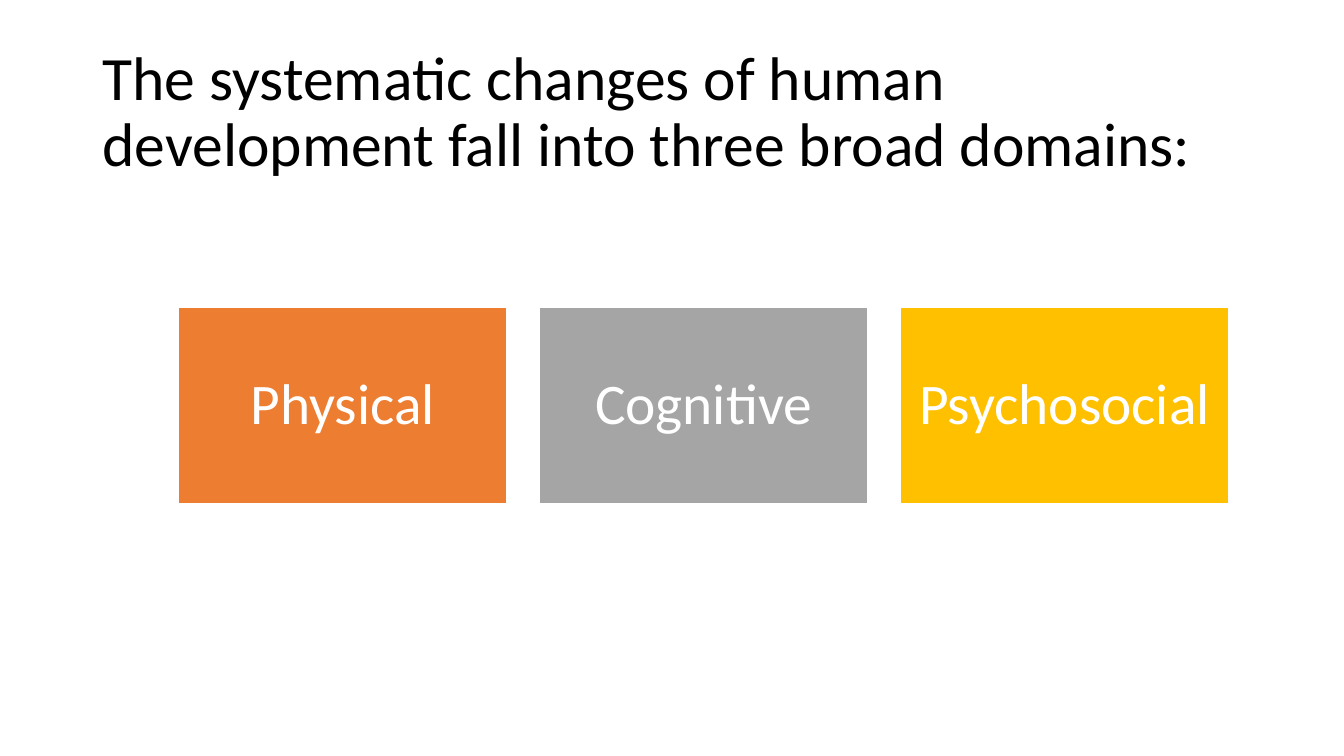
from dataclasses import dataclass

from pptx import Presentation
from pptx.dml.color import RGBColor
from pptx.enum.shapes import MSO_SHAPE
from pptx.enum.text import MSO_ANCHOR, PP_ALIGN
from pptx.slide import Slide
from pptx.text.text import TextFrame
from pptx.util import Inches, Pt

RECT = MSO_SHAPE.RECTANGLE
MIDDLE = MSO_ANCHOR.MIDDLE
LEFT, CENTER = PP_ALIGN.LEFT, PP_ALIGN.CENTER

BLACK = RGBColor(0x00, 0x00, 0x00)
WHITE = RGBColor(0xFF, 0xFF, 0xFF)
ORANGE = RGBColor(0xED, 0x7D, 0x31)
GRAY = RGBColor(0xA5, 0xA5, 0xA5)
GOLD = RGBColor(0xFF, 0xC0, 0x00)

FONT = "Calibri"
START, TOP, WIDTH, HEIGHT, STEP = 1.77, 3.05, 3.26, 1.95, 3.58
INSET = Inches(0.17)


@dataclass
class Domain:
    name: str
    color: RGBColor


TITLE = "The systematic changes of human development fall into three broad domains:"
DOMAINS = [
    Domain("Physical", ORANGE),
    Domain("Cognitive", GRAY),
    Domain("Psychosocial", GOLD),
]


def write(frame: TextFrame, text: str, size: int, color: RGBColor, align: PP_ALIGN) -> None:
    """Fill a frame with one vertically centred paragraph."""
    frame.word_wrap = True
    frame.vertical_anchor = MIDDLE
    para = frame.paragraphs[0]
    para.text = text
    para.alignment = align
    para.line_spacing = 0.9
    para.font.name = FONT
    para.font.size = Pt(size)
    para.font.color.rgb = color


def add_title(slide: Slide) -> None:
    """Add the slide title."""
    box = slide.shapes.add_textbox(Inches(0.92), Inches(0.4), Inches(11.5), Inches(1.45))
    write(box.text_frame, TITLE, 44, BLACK, LEFT)


def add_domain(slide: Slide, domain: Domain, left: float) -> None:
    """Add one coloured domain block."""
    block = slide.shapes.add_shape(
        RECT, Inches(left), Inches(TOP), Inches(WIDTH), Inches(HEIGHT)
    )
    block.shadow.inherit = False
    block.fill.solid()
    block.fill.fore_color.rgb = domain.color
    block.line.color.rgb = WHITE
    block.line.width = Pt(1)
    frame = block.text_frame
    frame.margin_left = frame.margin_right = INSET
    frame.margin_top = frame.margin_bottom = INSET
    write(frame, domain.name, 41, WHITE, CENTER)


def main() -> None:
    """Build and save the slide."""
    deck = Presentation()
    deck.slide_width, deck.slide_height = Inches(13.33), Inches(7.5)
    slide = deck.slides.add_slide(deck.slide_layouts[6])
    add_title(slide)
    for i, domain in enumerate(DOMAINS):
        add_domain(slide, domain, START + i * STEP)
    deck.save("out.pptx")


if __name__ == "__main__":
    main()
